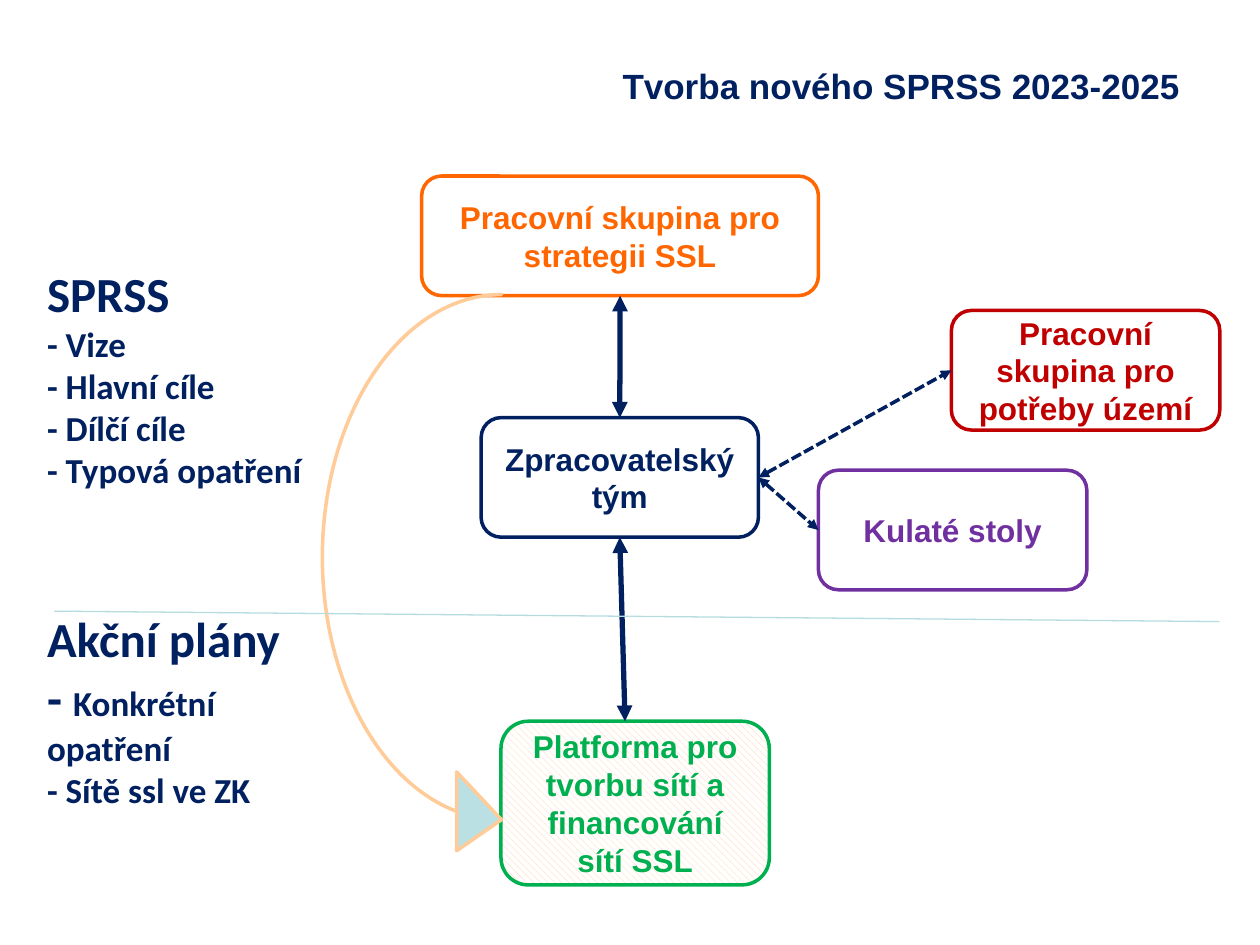
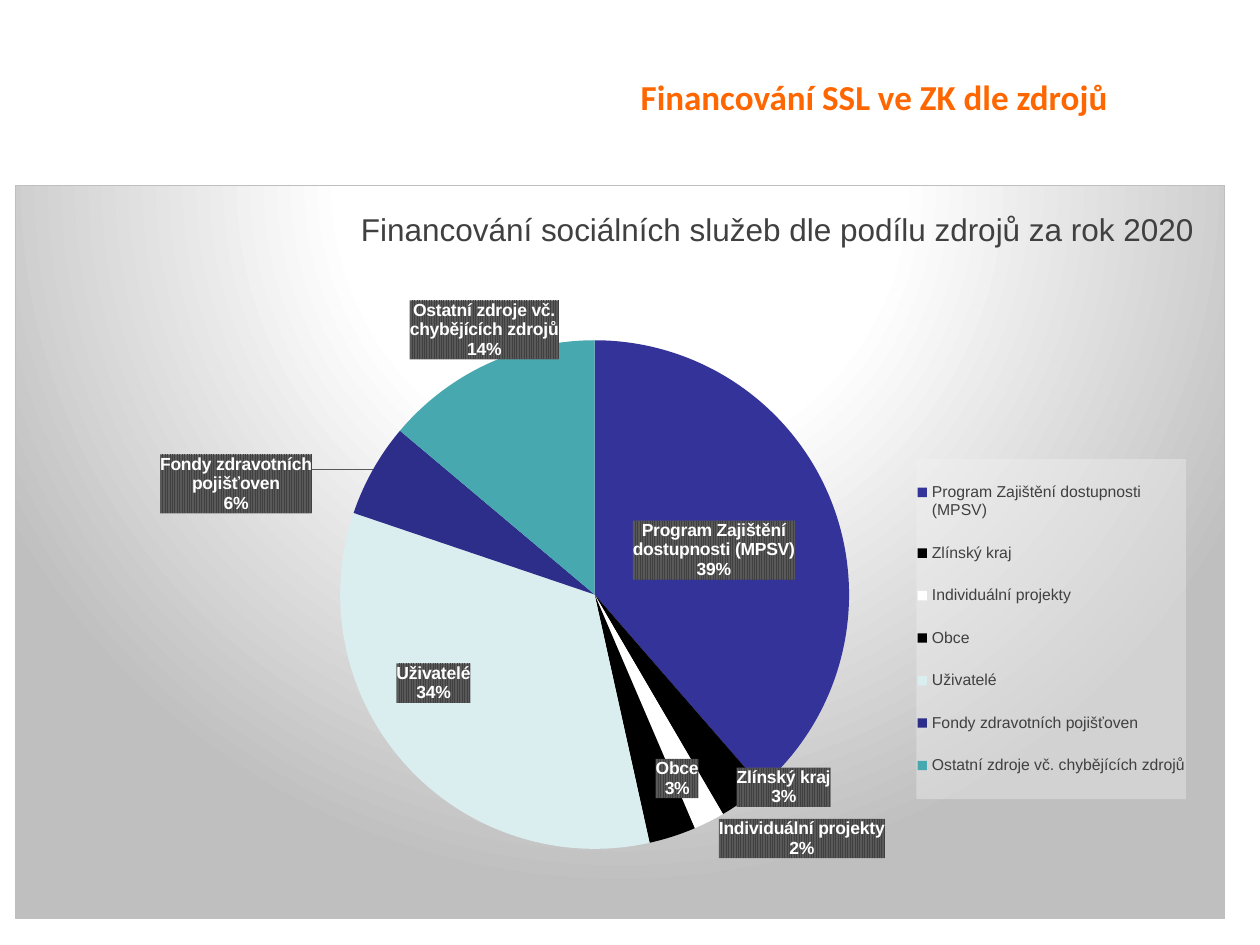
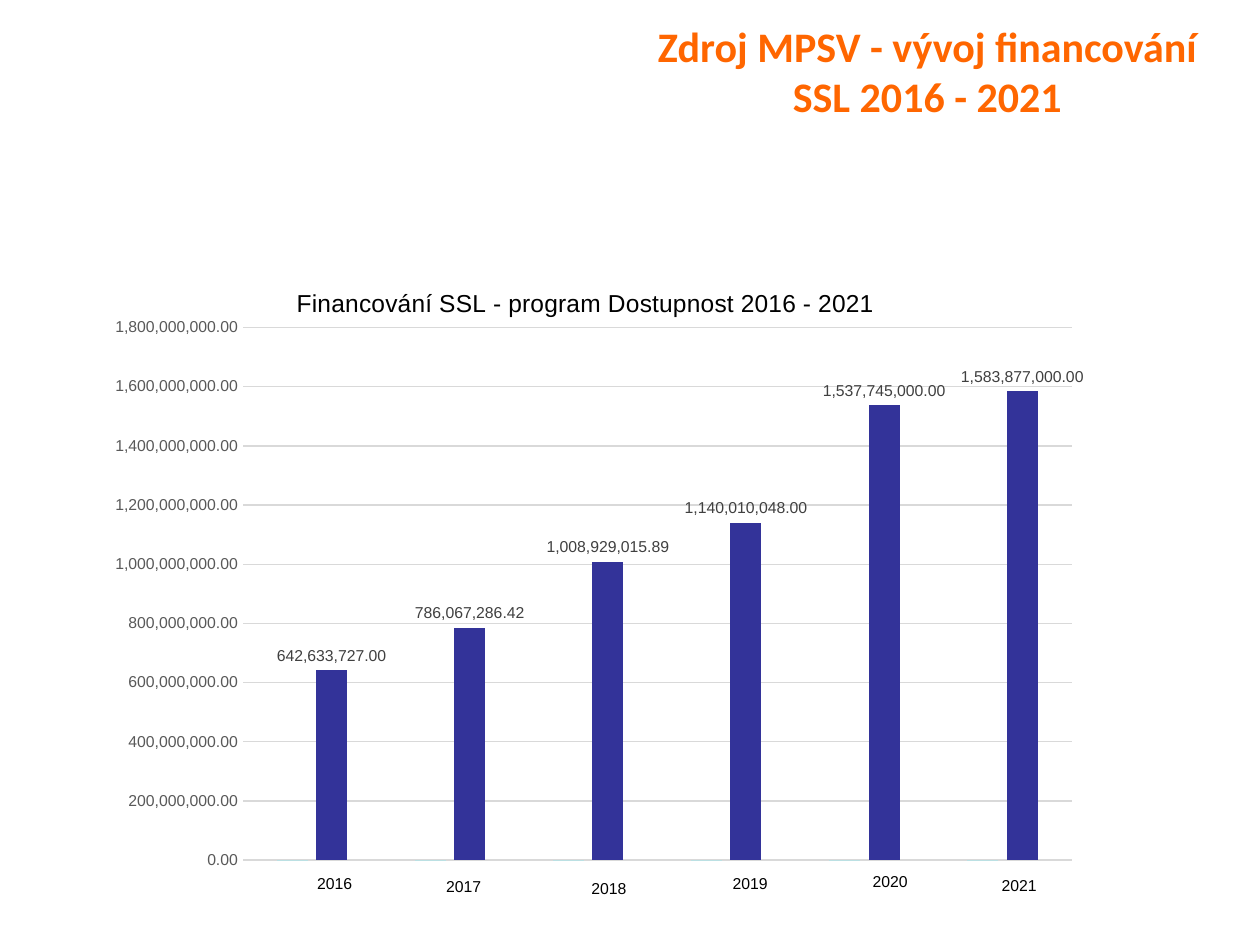
"""Build three slides on planning and funding of social services."""
from dataclasses import dataclass

from pptx import Presentation
from pptx import util as u
from pptx.chart import data
from pptx.dml.color import RGBColor
from pptx.enum import chart as ch, dml, shapes, text
from pptx.oxml import parse_xml
from pptx.oxml.ns import nsdecls, qn

NS = nsdecls("c", "a")
EXT = ('<c:extLst><c:ext uri="{{CE6537A1-D6FC-4f65-9D91-7224C49458BB}}" '
       'xmlns:c15="http://schemas.microsoft.com/office/drawing/2012/chart">'
       '{}</c:ext></c:extLst>')


@dataclass(frozen=True)
class Theme:
    """Hold colours, fonts and type sizes."""
    navy: str = "002060"
    orange: str = "FF6600"
    violet: str = "7030A0"
    red: str = "C00000"
    green: str = "00B050"
    peach: str = "FFCC99"
    aqua: str = "BBE0E3"
    rule: str = "B6DCDF"
    blue: str = "333399"
    pale: str = "DAEDEF"
    ink: str = "2D2D8A"
    teal: str = "48A8B0"
    white: str = "FFFFFF"
    black: str = "000000"
    dark: str = "404040"
    gray: str = "595959"
    mist: str = "F2F2F2"
    silver: str = "BFBFBF"
    grid: str = "D9D9D9"
    sans: str = "Arial"
    head: str = "Calibri"
    tiny: int = 9
    small: int = 10
    mid: int = 14
    label: int = 18
    body: int = 20
    large: int = 24
    huge: int = 28


T = Theme()


@dataclass(frozen=True)
class Rect:
    """Give a place in centimetres."""
    x: float
    y: float
    w: float
    h: float

    def emu(self) -> tuple:
        """Return the four lengths."""
        return tuple(u.Cm(v) for v in (self.x, self.y, self.w, self.h))


@dataclass(frozen=True)
class Box:
    """Describe a rounded box with its label."""
    name: str
    label: str
    rect: Rect
    color: str


@dataclass(frozen=True)
class Tag:
    """Describe the data labels of a series, with shifts in percent."""
    color: str
    size: int
    pos: str
    form: str
    shifts: dict
    sizes: dict
    pie: bool = False


@dataclass(frozen=True)
class Slice:
    """Describe one source of funding, with label shift and size in percent."""
    name: str
    share: int
    color: str
    shift: tuple
    size: tuple = ()


BOXES = [
    Box("plan", "Pracovní skupina pro strategii SSL", Rect(8.5, 3.55, 8, 2.41), T.orange),
    Box("team", "Zpracovatelský tým", Rect(9.7, 8.42, 5.59, 2.41), T.navy),
    Box("round", "Kulaté stoly", Rect(16.5, 9.48, 5.41, 2.41), T.violet),
    Box("needs", "Pracovní skupina pro potřeby území", Rect(19.18, 6.26, 5.41, 2.41), T.red),
    Box("net", "Platforma pro tvorbu sítí a financování sítí SSL",
        Rect(10.1, 14.54, 5.41, 3.3), T.green),
]
NOTES = [
    ("SPRSS", T.huge, 0), ("- Vize", T.body, 0), ("- Hlavní cíle", T.body, 0),
    ("- Dílčí cíle", T.body, 0), ("- Typová opatření", T.body, 0),
    ("Akční plány", T.huge, 67.5), ("- Konkrétní opatření", T.body, 0),
    ("- Sítě ssl ve ZK", T.body, 0),
]
SLICES = [
    Slice("Program Zajištění dostupnosti (MPSV)", 39, T.blue, (0, 0)),
    Slice("Zlínský kraj", 3, T.black, (9.5, 12.2)),
    Slice("Individuální projekty", 2, T.white, (12.4, 17.8)),
    Slice("Obce", 3, T.black, (3.6, 8.6)),
    Slice("Uživatelé", 34, T.pale, (-5.5, 0.5)),
    Slice("Fondy zdravotních pojišťoven", 6, T.ink, (-20.5, -6.6)),
    Slice("Ostatní zdroje vč. chybějících zdrojů", 14, T.teal, (-4.7, -20.4), (20, 8.1)),
]
YEARS = list(range(2016, 2022))
FUNDS = [642633727, 786067286.42, 1008929015.89, 1140010048, 1537745000, 1583877000]
SHIFTS = [(4.2, 5.9), (3.3, 6.4), (4, 6.7), (4.3, 5.9), (4.5, 5.6), (3.6, 6.2)]


def rgb(color: str) -> RGBColor:
    """Turn a hex string into a colour."""
    return RGBColor.from_string(color)


def style(font, size: int, color: str, face: str = T.sans, bold: bool = False) -> None:
    """Set size, colour, face and weight of a font."""
    font.size, font.name, font.bold = u.Pt(size), face, bold
    font.color.rgb = rgb(color)


def write(slide, rect: Rect):
    """Add a wrapping, middle-anchored text frame."""
    frame = slide.shapes.add_textbox(*rect.emu()).text_frame
    frame.word_wrap = True
    frame.vertical_anchor = text.MSO_ANCHOR.MIDDLE
    return frame


def title(slide, words: str, rect: Rect, size: int, color: str = T.orange,
          face: str = T.head, align=text.PP_ALIGN.CENTER) -> None:
    """Add a slide title."""
    para = write(slide, rect).paragraphs[0]
    para.text, para.alignment = words, align
    style(para.font, size, color, face, True)


def shape(slide, kind, rect: Rect, color: str):
    """Add an outlined shape without shadow or fill."""
    item = slide.shapes.add_shape(kind, *rect.emu())
    item.shadow.inherit = False
    item.fill.background()
    item.line.color.rgb = rgb(color)
    item.line.width = u.Pt(2)
    return item


def draw(slide, box: Box):
    """Draw a rounded box."""
    item = shape(slide, shapes.MSO_SHAPE.ROUNDED_RECTANGLE, box.rect, box.color)
    frame = item.text_frame
    frame.word_wrap = True
    frame.vertical_anchor = text.MSO_ANCHOR.MIDDLE
    para = frame.paragraphs[0]
    para.text, para.alignment = box.label, text.PP_ALIGN.CENTER
    style(para.font, T.label, box.color, bold=True)
    return item


def line(slide, ends: tuple, color: str, width: float, heads: bool = False, dash=None):
    """Add a straight line, with arrowheads if asked."""
    item = slide.shapes.add_connector(shapes.MSO_CONNECTOR.STRAIGHT, *map(u.Cm, ends))
    item.line.color.rgb = rgb(color)
    item.line.width = u.Pt(width)
    if dash:
        item.line.dash_style = dash
    if heads:
        pen = item.line._get_or_add_ln()
        for end in ("headEnd", "tailEnd"):
            pen.append(parse_xml(f'<a:{end} {NS} type="triangle"/>'))
    item.element.spPr.append(parse_xml(f"<a:effectLst {NS}/>"))
    return item


def spot(x: float, y: float, size: tuple = (), inner: bool = False, edge: bool = True) -> str:
    """Make a manual chart layout from percentages."""
    keys = [("xMode", "edge"), ("yMode", "edge")] if edge else []
    if inner:
        keys.insert(0, ("layoutTarget", "inner"))
    keys += [(key, val / 100) for key, val in zip("xywh", (x, y, *size))]
    body = "".join(f'<c:{key} val="{val}"/>' for key, val in keys)
    return f"<c:layout {NS}><c:manualLayout>{body}</c:manualLayout></c:layout>"


def place(node, layout: str) -> None:
    """Put a layout into a chart part."""
    for old in node.findall(qn("c:layout")):
        node.remove(old)
    ahead = (qn("c:tx"), qn("c:legendPos"))
    node.insert(sum(kid.tag in ahead for kid in node), parse_xml(layout))


def solid(color: str) -> str:
    """Make a solid fill."""
    return f'<a:solidFill><a:srgbClr val="{color}"/></a:solidFill>'


def room(size: tuple) -> str:
    """Fix the size of a data label."""
    if not size:
        return ""
    body = "".join(f'<c:{key} val="{val / 100}"/>' for key, val in zip("wh", size))
    return EXT.format(f"<c15:layout><c:manualLayout>{body}</c:manualLayout></c15:layout>")


def tag(series, look: Tag) -> None:
    """Set the data labels of a series."""
    pie = int(look.pie)
    back = (f'<c:spPr><a:pattFill prst="ltVert"><a:fgClr><a:srgbClr val="{T.dark}"/></a:fgClr>'
            f'<a:bgClr><a:srgbClr val="{T.gray}"/></a:bgClr></a:pattFill></c:spPr>')
    flags = {"LegendKey": 0, "Val": 1 - pie, "CatName": pie, "SerName": 0,
             "Percent": pie, "BubbleSize": 0}
    core = (f'<c:numFmt formatCode="{look.form}" sourceLinked="0"/>{back if pie else ""}'
            f'<c:txPr><a:bodyPr/><a:p><a:pPr><a:defRPr sz="{look.size * 100}" b="{pie}">'
            f'{solid(look.color)}<a:latin typeface="{T.sans}"/></a:defRPr></a:pPr>'
            f'<a:endParaRPr/></a:p></c:txPr><c:dLblPos val="{look.pos}"/>'
            + "".join(f'<c:show{key} val="{val}"/>' for key, val in flags.items())
            + ("<c:separator>\n</c:separator>" if pie else ""))
    marks = "".join(f'<c:dLbl><c:idx val="{i}"/>{spot(*move, edge=False)}{core}'
                    f'{room(look.sizes.get(i, ()))}</c:dLbl>'
                    for i, move in look.shifts.items())
    lead = f'<c:showLeaderLines val="{pie}"/>'
    if pie:
        lead += (f'<c:leaderLines><c:spPr><a:ln w="9525">{solid(T.gray)}</a:ln>'
                 '</c:spPr></c:leaderLines>')
    else:
        lead += EXT.format('<c15:showLeaderLines val="0"/>')
    old = series.data_labels._element
    old.getparent().replace(old, parse_xml(f"<c:dLbls {NS}>{marks}{core}{lead}</c:dLbls>"))


def graph(slide, kind, rect: Rect, cats: list, rows: list, head: str, size: int,
          color: str, top: tuple, plot: tuple):
    """Add a chart with its title and plot area in place."""
    feed = data.CategoryChartData()
    feed.categories = cats
    for i, vals in enumerate(rows, 1):
        feed.add_series(f"Series {i}", vals)
    chart = slide.shapes.add_chart(kind, *rect.emu(), feed).chart
    style(chart.font, T.small, T.black)
    para = chart.chart_title.text_frame.paragraphs[0]
    para.text = head
    style(para.font, size, color)
    place(chart.chart_title.element, spot(*top))
    place(chart.element.find(f".//{qn('c:plotArea')}"), spot(*plot[:2], plot[2:], True))
    return chart


def team(slide) -> None:
    """Draw who makes the new plan."""
    frame = write(slide, Rect(0.7, 3.53, 6.2, 14.6))
    for i, (words, size, gap) in enumerate(NOTES):
        para = frame.add_paragraph() if i else frame.paragraphs[0]
        if words.startswith("- Konkrétní"):
            dash, rest = para.add_run(), para.add_run()
            dash.text, rest.text = words[:2], words[2:]
            dash.font.size = u.Pt(T.huge)
        else:
            para.text = words
        if gap:
            para.space_before = u.Pt(gap)
        style(para.font, size, T.navy, T.head, True)
    box = {b.name: draw(slide, b) for b in BOXES}
    fill = box["net"].fill
    fill.patterned()
    fill.pattern = dml.MSO_PATTERN.WIDE_DOWNWARD_DIAGONAL
    fill.fore_color.rgb, fill.back_color.rgb = rgb(T.peach), rgb(T.white)

    bow = shape(slide, shapes.MSO_SHAPE.CURVED_LEFT_ARROW, Rect(6.5, 5.94, 3.61, 11.38), T.peach)
    bow.fill.solid()
    bow.fill.fore_color.rgb = rgb(T.aqua)
    for i, val in enumerate((0, 0.44, 0.25)):
        bow.adjustments[i] = val
    bow.element.spPr.xfrm.set("flipH", "1")

    dash = dml.MSO_LINE.SQUARE_DOT
    for start, out, end, into, width, kind in (
            ("plan", 2, "team", 0, 3, None), ("team", 2, None, 0, 3, None),
            ("team", 3, "needs", 1, 2, dash), ("team", 3, "round", 1, 2, dash)):
        link = line(slide, (12.5, 10.83, 12.6, 14.54), T.navy, width, True, kind)
        link.begin_connect(box[start], out)
        if end:
            link.end_connect(box[end], into)
    line(slide, (1.09, 12.32, 24.58, 12.53), T.rule, 0.75)
    title(slide, "Tvorba nového SPRSS 2023-2025", Rect(12.3, 0.93, 11.81, 1.6), T.body,
          T.navy, T.sans, text.PP_ALIGN.LEFT)


def shares(slide) -> None:
    """Draw the pie of funding sources."""
    title(slide, "Financování SSL ve ZK dle zdrojů", Rect(11.02, 0.91, 13.21, 2.06), T.body)
    chart = graph(slide, ch.XL_CHART_TYPE.PIE, Rect(0.3, 3.73, 24.4, 14.8),
                  [s.name for s in SLICES], [[s.share for s in SLICES]],
                  "Financování sociálních služeb dle podílu zdrojů za rok 2020",
                  T.label, T.dark, (28.1, 2.45), (2.5, 21.1, 90.8, 69.4))
    stops = "".join(f'<a:gs pos="{pos}000"><a:srgbClr val="{color}"/></a:gs>'
                    for pos, color in ((0, T.white), (39, T.white), (100, T.silver)))
    chart.element.find(qn("c:chart")).addnext(parse_xml(
        f'<c:spPr {NS}><a:gradFill><a:gsLst>{stops}</a:gsLst><a:path path="circle">'
        '<a:fillToRect l="50000" t="-80000" r="50000" b="180000"/></a:path></a:gradFill>'
        f'<a:ln w="9525">{solid(T.silver)}</a:ln></c:spPr>'))
    chart.has_legend = True
    key = chart.legend
    key.position = ch.XL_LEGEND_POSITION.RIGHT
    key.include_in_layout = False
    style(key.font, T.tiny, T.dark)
    place(key._element, spot(74.5, 37.3, (22.3, 46.4)))
    key._element.find(qn("c:overlay")).addnext(parse_xml(
        f'<c:spPr {NS}><a:solidFill><a:srgbClr val="{T.mist}"><a:alpha val="39000"/>'
        '</a:srgbClr></a:solidFill></c:spPr>'))
    plot = chart.plots[0]
    plot.vary_by_categories = True
    pie = plot.series[0]
    for i, part in enumerate(SLICES):
        fill = pie.points[i].format.fill
        fill.solid()
        fill.fore_color.rgb = rgb(part.color)
    moves = {i: s.shift for i, s in enumerate(SLICES) if any(s.shift)}
    sizes = {i: s.size for i, s in enumerate(SLICES)}
    tag(pie, Tag(T.white, T.small, "ctr", "0%", moves, sizes, True))


def growth(slide) -> None:
    """Draw the yearly funding as columns."""
    title(slide, "Zdroj MPSV - vývoj financování SSL 2016 - 2021",
          Rect(12.7, 0.32, 11.99, 2.21), T.large)
    chart = graph(slide, ch.XL_CHART_TYPE.COLUMN_CLUSTERED, Rect(1.64, 5.33, 20.35, 13),
                  [str(i) for i in range(1, 7)], [YEARS, FUNDS],
                  "Financování SSL - program Dostupnost 2016 - 2021",
                  T.mid, T.black, (20.9, 2.8), (16, 9.8, 82.1, 82.6))
    chart.has_legend = False
    chart.category_axis.visible = False
    axis = chart.value_axis
    axis.minimum_scale, axis.maximum_scale, axis.major_unit = 0, 1.8e9, 2e8
    axis.major_tick_mark = ch.XL_TICK_MARK.NONE
    axis.format.line.fill.background()
    axis.major_gridlines.format.line.color.rgb = rgb(T.grid)
    axis.major_gridlines.format.line.width = u.Pt(0.75)
    axis.tick_labels.number_format = "#,##0.00"
    axis.tick_labels.number_format_is_linked = False
    style(axis.tick_labels.font, T.tiny, T.gray)
    plot = chart.plots[0]
    plot.vary_by_categories = False
    plot.gap_width, plot.overlap = 219, -27
    looks = (Tag(T.black, T.tiny, "outEnd", "General", dict(enumerate(SHIFTS)), {}),
             Tag(T.dark, T.tiny, "outEnd", "#,##0.00", {}, {}))
    for row, color, look in zip(plot.series, (T.aqua, T.blue), looks):
        row.format.fill.solid()
        row.format.fill.fore_color.rgb = rgb(color)
        tag(row, look)


def main() -> None:
    """Build and save the slides."""
    deck = Presentation()
    deck.slide_width, deck.slide_height = u.Cm(25.4), u.Cm(19.05)
    for build in (team, shares, growth):
        build(deck.slides.add_slide(deck.slide_layouts[6]))
    deck.save("out.pptx")


if __name__ == "__main__":
    main()
